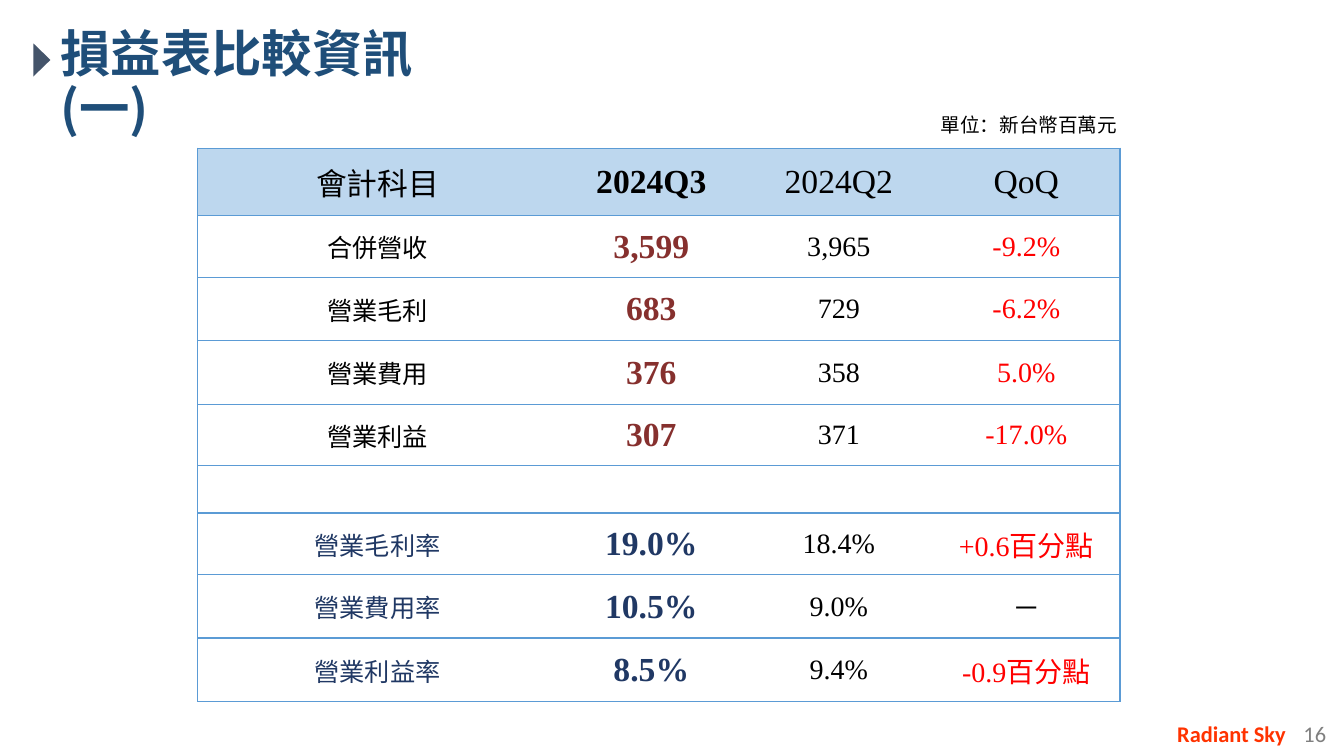
from lxml.etree import SubElement
from pptx import Presentation
from pptx.dml.color import RGBColor
from pptx.enum.shapes import MSO_SHAPE as Preset
from pptx.enum.text import MSO_ANCHOR as Anchor, MSO_AUTO_SIZE as AutoSize, PP_ALIGN as Align
from pptx.oxml import parse_xml
from pptx.oxml.ns import nsdecls, qn
from pptx.util import Inches, Pt

COLORS = {
    "title": "1F4E79", "marker": "44546A", "text": "000000", "line": "5B9BD5",
    "header": "BDD7EE", "body": "FFFFFF", "amount": "86302E", "ratio": "203864",
    "change": "FF0000", "company": "FF3300", "page": "808080",
}
CJK = "Noto Sans CJK SC"
SERIF = "Times New Roman"


def add_run(paragraph, text, color, **formats):
    run = paragraph.add_run()
    run.text = text
    run.font.color.rgb = RGBColor.from_string(COLORS[color])
    for name, value in formats.items():
        setattr(run.font, name, value)
    SubElement(run.font._element, qn("a:ea")).set("typeface", CJK)


def add_text(left, top, width, height, wrap, align=Align.LEFT):
    box = slide.shapes.add_textbox(Inches(left), Inches(top), Inches(width), Inches(height))
    box.text_frame.word_wrap = wrap
    box.text_frame.auto_size = AutoSize.SHAPE_TO_FIT_TEXT
    paragraph = box.text_frame.paragraphs[0]
    paragraph.alignment = align
    return paragraph


prs = Presentation()
prs.slide_width, prs.slide_height = Inches(13.33), Inches(7.5)
slide = prs.slides.add_slide(prs.slide_layouts[6])

# Footer
add_run(add_text(12.83, 7.1, 0.5, 0.37, True), "16", "page", size=Pt(16), name="Calibri")
add_run(add_text(11.35, 7.1, 1.73, 0.37, True, Align.CENTER), "Radiant Sky", "company",
        size=Pt(16), name="Calibri", bold=True)

# Title with its marker
title = add_text(0.5, 0.24, 4.2, 0.71, True)
title.line_spacing = 0.9
for words, typeface in (("損益表比較資訊", "Calibri"), ("(一)", CJK)):
    add_run(title, words, "title", size=Pt(36), name=typeface, bold=True)

marker = slide.shapes.add_shape(Preset.ISOSCELES_TRIANGLE, Inches(0.25), Inches(0.51),
                                Inches(0.33), Inches(0.17))
marker.rotation = 90
marker.shadow.inherit = False
marker.fill.solid()
marker.fill.fore_color.rgb = RGBColor.from_string(COLORS["marker"])
marker.line.fill.background()

# Income statement: item, this quarter, last quarter, change
statement = [
    ("會計科目", "2024Q3", "2024Q2", "QoQ"),
    ("合併營收", "3,599", "3,965", "-9.2%"),
    ("營業毛利", "683", "729", "-6.2%"),
    ("營業費用", "376", "358", "5.0%"),
    ("營業利益", "307", "371", "-17.0%"),
    ("", "", "", ""),
    ("營業毛利率", "19.0%", "18.4%", "+0.6百分點"),
    ("營業費用率", "10.5%", "9.0%", "─"),
    ("營業利益率", "8.5%", "9.4%", "-0.9百分點"),
]
column_widths = [3.57, 1.86, 1.86, 1.86]
row_heights = [0.67, 0.61, 0.63, 0.63, 0.61, 0.47, 0.61, 0.63, 0.63]
header_sizes = [22, 24, 24, 24]
body_sizes = [18, 24, 20, 20]
header_colors = ["text"] * 4
amount_colors = ["text", "amount", "text", "change"]
ratio_colors = ["ratio", "ratio", "text", "change"]
cell_format = {
    "vertical_anchor": Anchor.MIDDLE, "margin_left": Inches(0.01),
    "margin_right": Inches(0.01), "margin_top": Inches(0.01), "margin_bottom": 0,
}

table = slide.shapes.add_table(len(statement), 4, Inches(1.96), Inches(1.47),
                               Inches(9.14), Inches(5.49)).table
table.first_row = table.horz_banding = False
# "No Style, No Grid"
table._tbl.tblPr.find(qn("a:tableStyleId")).text = "{2D5ABB26-0587-4C30-8999-92F81FD0307C}"
for column, width in zip(table.columns, column_widths):
    column.width = Inches(width)

for r, entries in enumerate(statement):
    table.rows[r].height = Inches(row_heights[r])
    sizes = body_sizes if r else header_sizes
    colors = header_colors if r == 0 else amount_colors if r < 5 else ratio_colors
    for c, entry in enumerate(entries):
        cell = table.cell(r, c)
        for name, value in cell_format.items():
            setattr(cell, name, value)

        # Rules between rows, and an outer frame
        sides = ["L"] * (c == 0) + ["R"] * (c == 3) + ["T", "B"]
        for side in sides:
            cell._tc.get_or_add_tcPr().append(parse_xml(
                f'<a:ln{side} {nsdecls("a")} w="12700"><a:solidFill>'
                f'<a:srgbClr val="{COLORS["line"]}"/></a:solidFill></a:ln{side}>'))
        cell.fill.solid()
        cell.fill.fore_color.rgb = RGBColor.from_string(COLORS["body" if r else "header"])

        if entry:
            paragraph = cell.text_frame.paragraphs[0]
            paragraph.alignment = Align.CENTER
            add_run(paragraph, entry, "text" if entry == "─" else colors[c],
                    size=Pt(sizes[c]), name=SERIF, bold=c == 1)

# Unit note
add_run(add_text(9.23, 1.07, 1.97, 0.34, False), "單位：新台幣百萬元", "text",
        size=Pt(14), name=CJK)

prs.save("out.pptx")
